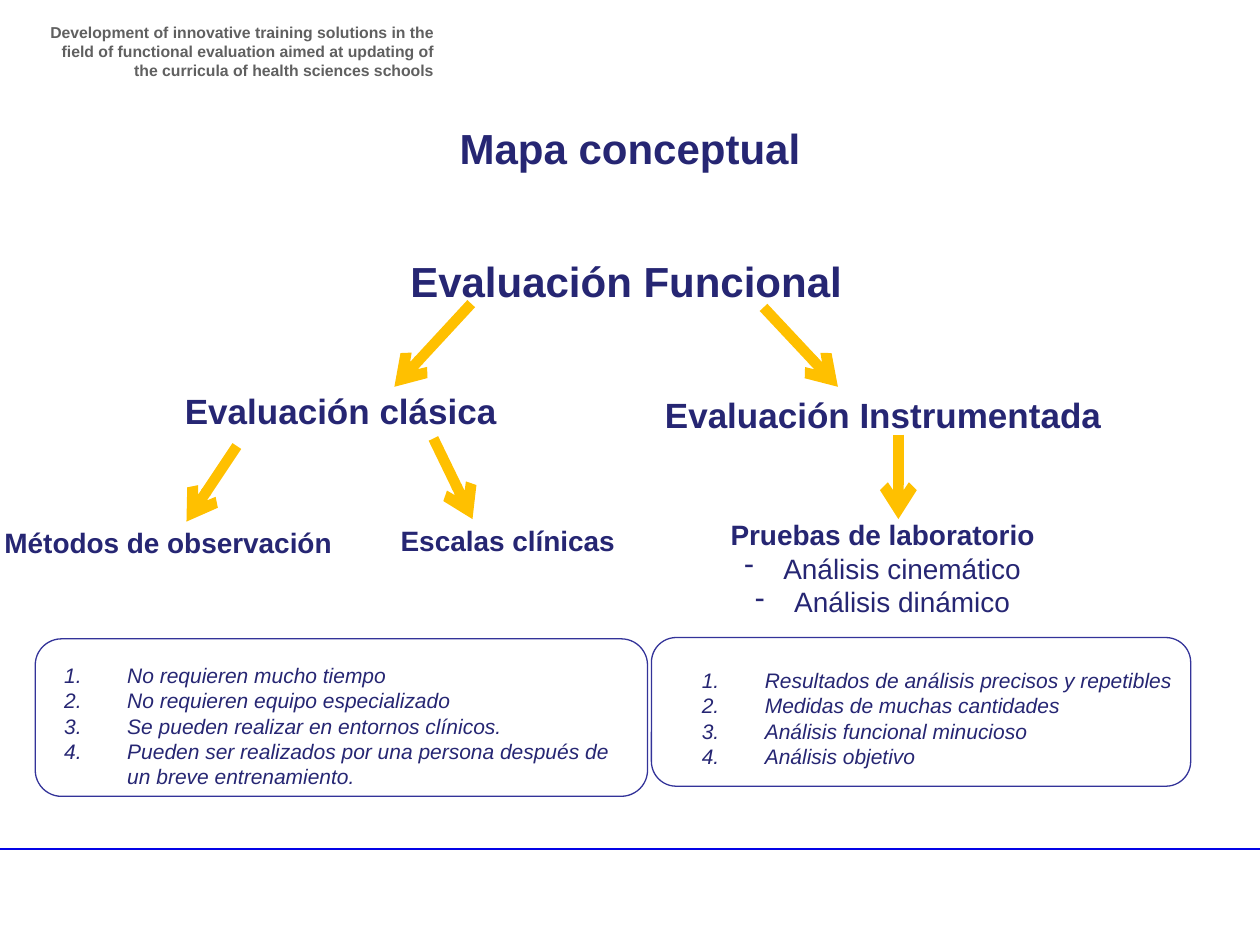
from lxml.etree import SubElement
from pptx import Presentation
from pptx.dml.color import RGBColor
from pptx.enum.shapes import MSO_CONNECTOR, MSO_SHAPE
from pptx.enum.text import MSO_ANCHOR, MSO_AUTO_SIZE, PP_ALIGN
from pptx.oxml.ns import qn
from pptx.util import Inches, Pt

NAVY = RGBColor(0x26, 0x26, 0x73)
GREY = RGBColor(0x60, 0x60, 0x60)
GOLD = RGBColor(0xFF, 0xC0, 0x00)
BORDER = RGBColor(0x33, 0x33, 0x99)
RULE = RGBColor(0x04, 0x04, 0xE6)

prs = Presentation()
prs.slide_width, prs.slide_height = Inches(10), Inches(7.5)
s = prs.slides.add_slide(prs.slide_layouts.get_by_name("Two Content"))
title, left_list, right_list = list(s.placeholders)[:3]


def write(sp, box, lines, size, align=PP_ALIGN.CENTER, color=NAVY, bold=True,
          italic=False, wrap=True, bullet=None, indent=0, first_bullet=0):
    """Place sp and fill it; lines from first_bullet on take the bullet (tag, attribute, value)."""
    sp.left, sp.top, sp.width, sp.height = [Inches(v) for v in box]
    tf = sp.text_frame
    tf.word_wrap = wrap
    tf.auto_size = MSO_AUTO_SIZE.NONE
    tf.vertical_anchor = MSO_ANCHOR.TOP
    for i, line in enumerate(lines):
        p = tf.paragraphs[0] if i == 0 else tf.add_paragraph()
        p.alignment = align
        p.space_before = Pt(0)
        bulleted = bullet and i >= first_bullet
        if bulleted:
            tag, attribute, value = bullet
            pPr = p._p.get_or_add_pPr()
            pPr.set("marL", str(Inches(indent)))
            pPr.set("indent", str(-Inches(indent)))
            SubElement(pPr, qn(tag)).set(attribute, value)
        r = p.add_run()
        r.text = line
        r.font.name = "Arial"
        r.font.size = Pt(size)
        r.font.bold = bold and not bulleted
        r.font.italic = italic
        r.font.color.rgb = color


def add_line(x1, y1, x2, y2, color, width):
    line = s.shapes.add_connector(MSO_CONNECTOR.STRAIGHT, Inches(x1), Inches(y1),
                                  Inches(x2), Inches(y2))
    line.line.color.rgb = color
    line.line.width = Pt(width)
    SubElement(line._element.spPr, qn("a:effectLst"))
    return line


# Header and footer rule
add_line(-0.05, 6.74, 10, 6.74, RULE, 1)
write(s.shapes.add_textbox(0, 0, 0, 0), (0.28, 0.13, 3.26, 0.47),
      ["Development of innovative training solutions in the ﬁeld of functional evaluation "
       "aimed at updating of the curricula of health sciences schools"],
      9, PP_ALIGN.RIGHT, GREY)

write(title, (0.55, 0.92, 8.9, 0.5), ["Mapa conceptual"], 24)

# Concept labels
for text, box, size, wrap in [
    ("Evaluación Funcional", (0.52, 1.98, 8.9, 0.5), 24, True),
    ("Evaluación clásica", (1.36, 3.04, 2.69, 0.44), 20, False),
    ("Evaluación Instrumentada", (2.56, 3.07, 8.9, 0.44), 20, True),
    ("Métodos de observación", (-0.08, 4.12, 2.83, 0.37), 16, False),
    ("Escalas clínicas", (3.07, 4.11, 1.92, 0.37), 16, False),
]:
    write(s.shapes.add_textbox(0, 0, 0, 0), box, [text], size, wrap=wrap)

write(s.shapes.add_textbox(0, 0, 0, 0), (5.68, 4.06, 2.65, 1.18),
      ["Pruebas de laboratorio", "Análisis cinemático", "Análisis dinámico"], 16,
      wrap=False, bullet=("a:buChar", "char", "-"), indent=0.31, first_bullet=1)

# Numbered lists
for sp, box, lines in [
    (left_list, (0.41, 5.21, 4.72, 1.11),
     ["No requieren mucho tiempo",
      "No requieren equipo especializado",
      "Se pueden realizar en entornos clínicos.",
      "Pueden ser realizados por una persona después de un breve entrenamiento."]),
    (right_list, (5.47, 5.25, 4.72, 0.91),
     ["Resultados de análisis precisos y repetibles",
      "Medidas de muchas cantidades",
      "Análisis funcional minucioso",
      "Análisis objetivo"]),
]:
    write(sp, box, lines, 12, PP_ALIGN.LEFT, bold=False, italic=True,
          bullet=("a:buAutoNum", "type", "arabicPeriod"), indent=0.5)

# Arrows between concepts
for ends in [
    (3.74, 2.41, 3.13, 3.07),
    (6.06, 2.44, 6.65, 3.07),
    (7.13, 3.45, 7.13, 4.12),
    (3.44, 3.48, 3.75, 4.12),
    (1.88, 3.54, 1.48, 4.14),
]:
    arrow = add_line(*ends, GOLD, 6)
    SubElement(arrow.line._get_or_add_ln(), qn("a:tailEnd")).set("type", "arrow")

# Frames around the lists
for box in [(0.28, 5.07, 4.86, 1.25), (5.17, 5.06, 4.28, 1.18)]:
    frame = s.shapes.add_shape(MSO_SHAPE.ROUNDED_RECTANGLE, *[Inches(v) for v in box])
    frame.shadow.inherit = False
    frame.fill.background()
    frame.line.color.rgb = BORDER
    frame.line.width = Pt(0.75)

prs.save("out.pptx")
